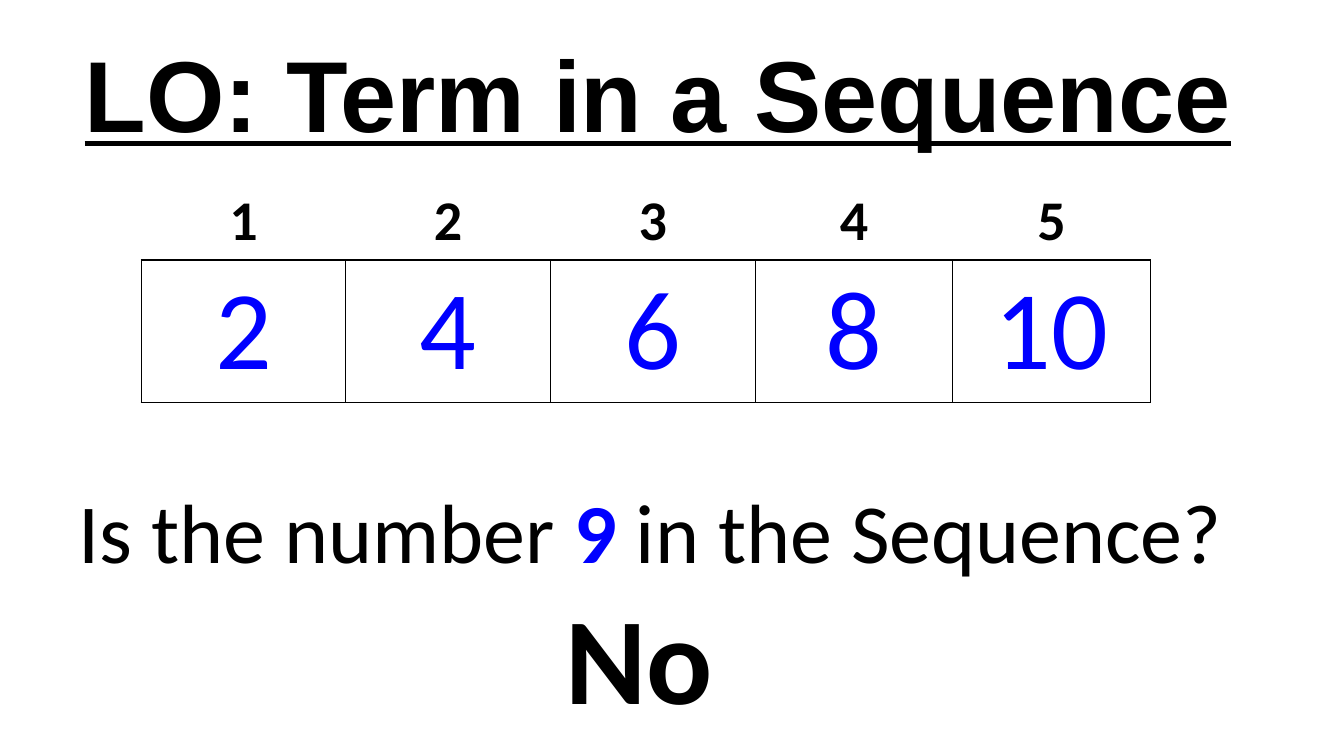
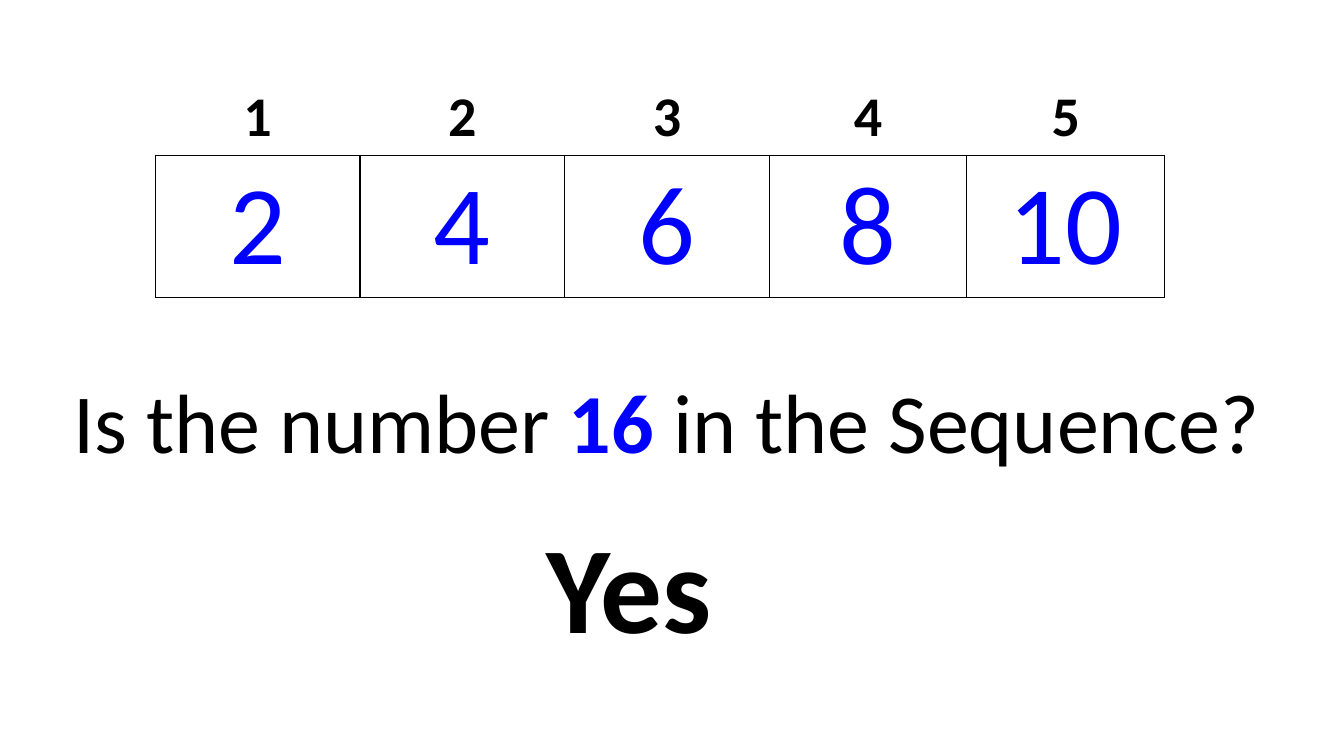
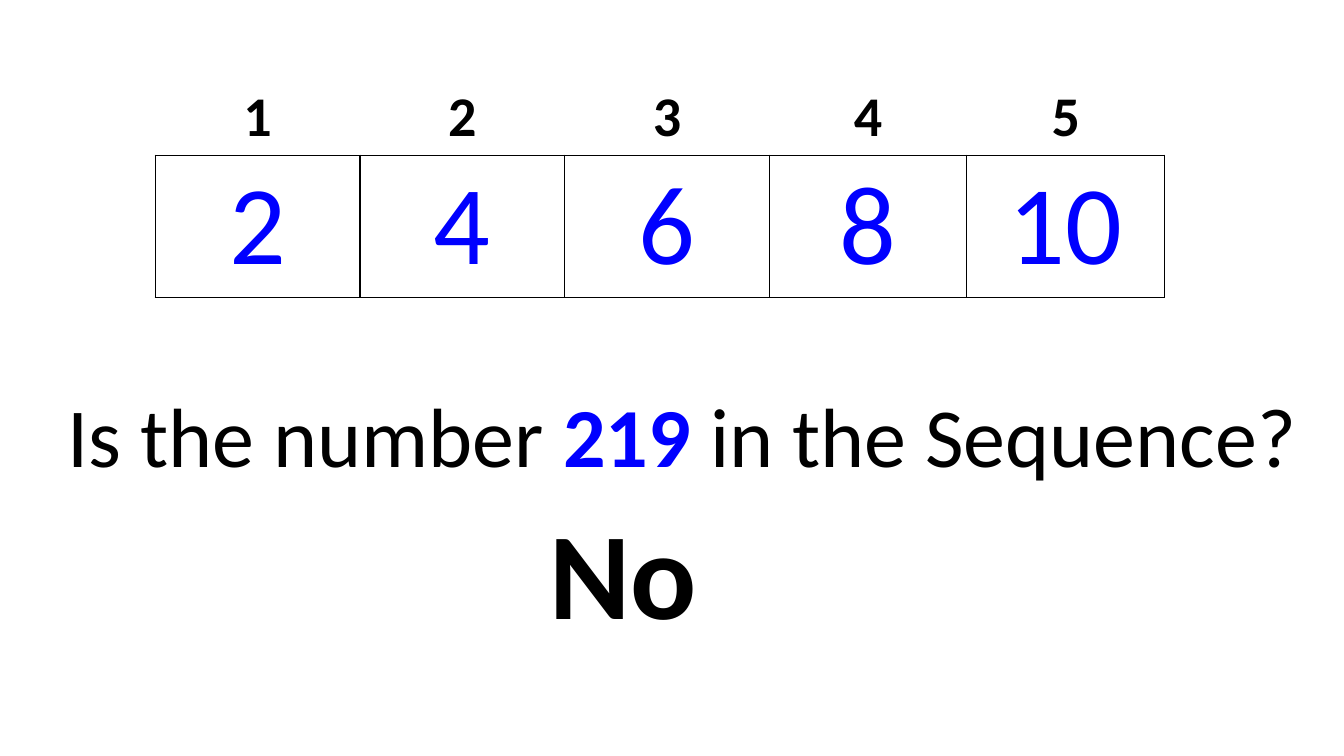
from dataclasses import dataclass

from lxml import etree
from pptx import Presentation
from pptx.dml.color import RGBColor
from pptx.enum.text import MSO_ANCHOR, PP_ALIGN
from pptx.oxml.ns import qn
from pptx.util import Pt

LEFT, CENTER = PP_ALIGN.LEFT, PP_ALIGN.CENTER
MIDDLE = MSO_ANCHOR.MIDDLE
EMU_PER_PX = 9144


@dataclass(frozen=True)
class Theme:
    black: str = "000000"
    blue: str = "0000FF"
    white: str = "FFFFFF"
    title_font: str = "Arial"
    body_font: str = "Calibri"
    title: int = 72
    position: int = 40
    term: int = 80
    question: int = 60
    answer: int = 88
    border: int = 1


T = Theme()
PLAIN = {"name": T.body_font, "bold": False, "underline": False, "color": T.black}
TITLE = {**PLAIN, "name": T.title_font, "size": T.title, "bold": True, "underline": True}
TITLE_END = {**PLAIN, "size": T.title}
POSITION = {**PLAIN, "size": T.position, "bold": True}
TERM = {**PLAIN, "size": T.term, "color": T.blue}
QUESTION = {**PLAIN, "size": T.question}
NUMBER = {**QUESTION, "bold": True, "color": T.blue}
ANSWER = {**PLAIN, "size": T.answer, "bold": True}

SLIDE_SIZE = (1333, 750)
TERMS = [2 * n for n in range(1, 6)]
COLUMNS = [203] * 3 + [196] * 2
ROWS = [76, 141]
SLIDES = [
    {"title": "LO: Term in a Sequence", "table": (140, 182), "number": 9,
     "question": (68, 471, 1206, 111), "align": LEFT,
     "answer": "No", "answer_box": (533, 572, 202, 158)},
    {"table": (154, 78), "number": 16,
     "question": (58, 362, 1206, 111), "align": CENTER,
     "answer": "Yes", "answer_box": (523, 501, 202, 158)},
    {"table": (154, 78), "number": 219,
     "question": (53, 376, 1247, 111), "align": CENTER,
     "answer": "No", "answer_box": (517, 487, 202, 158)},
]


def px(n):
    return n * EMU_PER_PX


def write(tf, runs, align=CENTER):
    p = tf.paragraphs[0]
    p.alignment = align
    for text, style in runs:
        r = p.add_run()
        r.text = text
        for key, value in style.items():
            if key == "color":
                r.font.color.rgb = RGBColor.from_string(value)
            else:
                setattr(r.font, key, Pt(value) if key == "size" else value)


def add_text(s, box, runs, align=CENTER):
    tf = s.shapes.add_textbox(*map(px, box)).text_frame
    tf.word_wrap = True
    write(tf, runs, align)


def set_borders(cell, drawn):
    tcPr = cell._tc.get_or_add_tcPr()
    for side in "LRTB":
        ln = etree.SubElement(tcPr, qn(f"a:ln{side}"), w=str(Pt(T.border)))
        if side in drawn:
            fill = etree.SubElement(ln, qn("a:solidFill"))
            etree.SubElement(fill, qn("a:srgbClr"), val=T.black)
        else:
            etree.SubElement(ln, qn("a:noFill"))


def fill_cell(cell, value, style, borders, fill=None):
    cell.margin_left = cell.margin_right = cell.margin_top = cell.margin_bottom = 0
    cell.vertical_anchor = MIDDLE
    set_borders(cell, borders)
    if fill:
        cell.fill.solid()
        cell.fill.fore_color.rgb = RGBColor.from_string(fill)
    else:
        cell.fill.background()
    write(cell.text_frame, [(str(value), style)])


def add_sequence(s, corner):
    box = (*corner, sum(COLUMNS), sum(ROWS))
    table = s.shapes.add_table(len(ROWS), len(COLUMNS), *map(px, box)).table
    table.first_row = table.horz_banding = False
    for row, height in zip(table.rows, ROWS):
        row.height = px(height)
    for i, (width, term) in enumerate(zip(COLUMNS, TERMS)):
        table.columns[i].width = px(width)
        fill_cell(table.cell(0, i), i + 1, POSITION, "B", T.white)
        fill_cell(table.cell(1, i), term, TERM, "LRTB")


def add_slide(prs, content):
    s = prs.slides.add_slide(prs.slide_layouts[6])
    add_sequence(s, content["table"])
    if "title" in content:
        add_text(s, (19, 27, 1290, 131), [(content["title"], TITLE), (" ", TITLE_END)])
    question = [("Is the number ", QUESTION), (str(content["number"]), NUMBER),
                (" in the Sequence?", QUESTION)]
    add_text(s, content["question"], question, content["align"])
    add_text(s, content["answer_box"], [(content["answer"], ANSWER)])


def main():
    prs = Presentation()
    prs.slide_width, prs.slide_height = map(px, SLIDE_SIZE)
    for content in SLIDES:
        add_slide(prs, content)
    prs.save("out.pptx")


if __name__ == "__main__":
    main()
